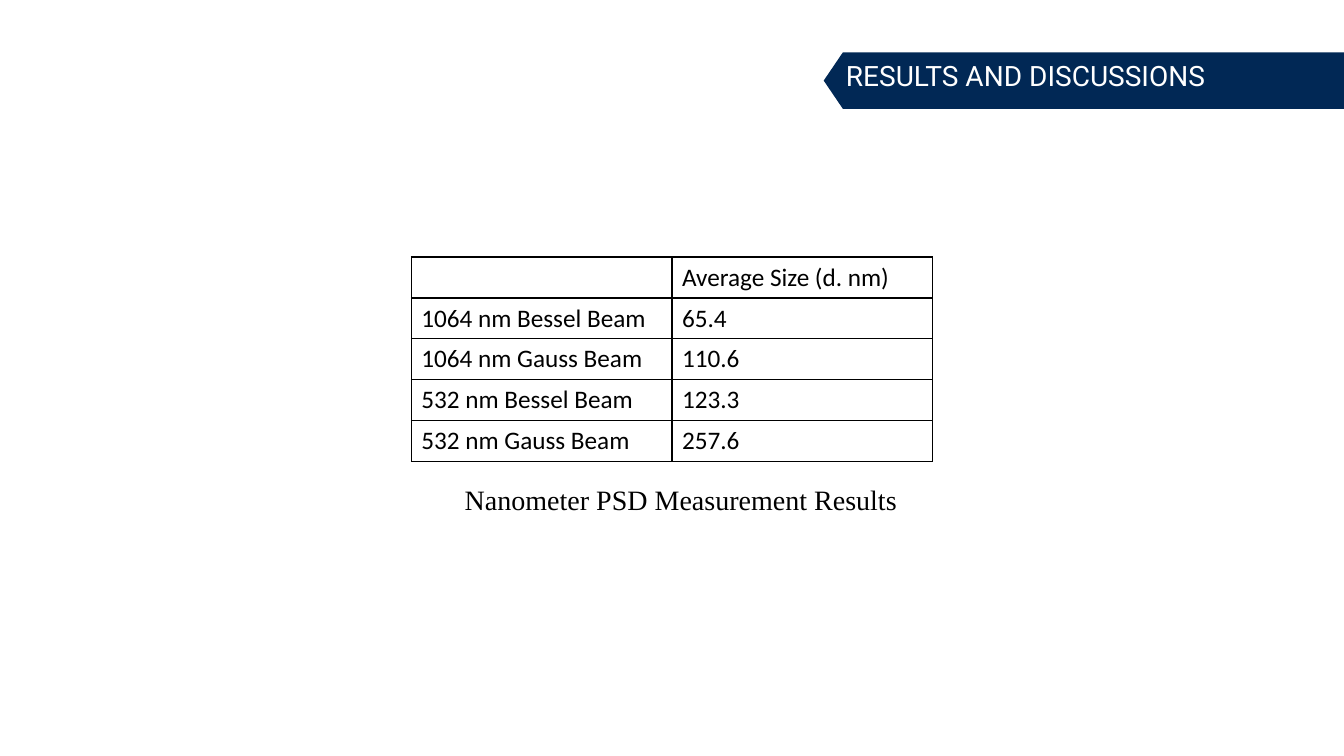
import dataclasses

import pptx
import pptx.dml.color
import pptx.enum.text
import pptx.oxml
import pptx.oxml.ns
import pptx.util

Inches = pptx.util.Inches
Pt = pptx.util.Pt
Color = pptx.dml.color.RGBColor


@dataclasses.dataclass(frozen=True)
class Theme:
    navy: Color = Color.from_string("012855")
    white: Color = Color.from_string("FFFFFF")
    black: Color = Color.from_string("000000")
    heading: Pt = Pt(20)
    body: Pt = Pt(18)


theme = Theme()


def style(paragraph, name, size, color):
    paragraph.font.name = name
    paragraph.font.size = size
    paragraph.font.color.rgb = color


deck = pptx.Presentation()
deck.slide_width = Inches(13.33)
deck.slide_height = Inches(7.5)
page = deck.slides.add_slide(deck.slide_layouts[5])

title = page.shapes.title
title.left, title.top = Inches(8.29), Inches(0.53)
title.width, title.height = Inches(4.15), Inches(0.44)
frame = title.text_frame
frame.text = "RESULTS AND DISCUSSIONS"
frame.word_wrap = False
frame.auto_size = pptx.enum.text.MSO_AUTO_SIZE.NONE
frame.vertical_anchor = pptx.enum.text.MSO_ANCHOR.TOP
frame.paragraphs[0].alignment = pptx.enum.text.PP_ALIGN.LEFT
style(frame.paragraphs[0], "Roboto", theme.heading, theme.white)

outline = page.shapes.build_freeform(Inches(8.36), Inches(0.52))
corners = [(13.33, 0.52), (13.33, 1.08), (8.36, 1.08), (8.17, 0.8)]
outline.add_line_segments([(Inches(x), Inches(y)) for x, y in corners], close=True)
banner = outline.convert_to_shape()
banner.shadow.inherit = False
banner.fill.solid()
banner.fill.fore_color.rgb = theme.navy
banner.line.fill.background()
title.element.addprevious(banner.element)

rows = [
    ("", "Average Size (d. nm)"),
    ("1064 nm Bessel Beam", "65.4"),
    ("1064 nm Gauss Beam", "110.6"),
    ("532 nm Bessel Beam", "123.3"),
    ("532 nm Gauss Beam", "257.6"),
]
table = page.shapes.add_table(
    len(rows), 2, Inches(4.08), Inches(2.55), Inches(5.17), Inches(2.03)
).table
table.first_row = False
table.horz_banding = False
for row_index, row in enumerate(rows):
    for column_index, text in enumerate(row):
        cell = table.cell(row_index, column_index)
        cell.text = text
        style(cell.text_frame.paragraphs[0], "Calibri", theme.body, theme.black)
        properties = cell._tc.get_or_add_tcPr()
        for side in "LRTB":
            properties.append(pptx.oxml.parse_xml(
                f'<a:ln{side} {pptx.oxml.ns.nsdecls("a")} w="{Pt(1)}"><a:solidFill>'
                f'<a:srgbClr val="{theme.black}"/></a:solidFill></a:ln{side}>'
            ))
        cell.fill.background()

caption = page.shapes.add_textbox(Inches(4.51), Inches(4.57), Inches(5.41), Inches(0.55))
caption.text_frame.word_wrap = True
para = caption.text_frame.paragraphs[0]
para.text = "Nanometer PSD Measurement Results"
para.line_spacing = 1.5
para.space_after = Pt(8)
style(para, "Times New Roman", theme.heading, theme.black)

deck.save("out.pptx")
